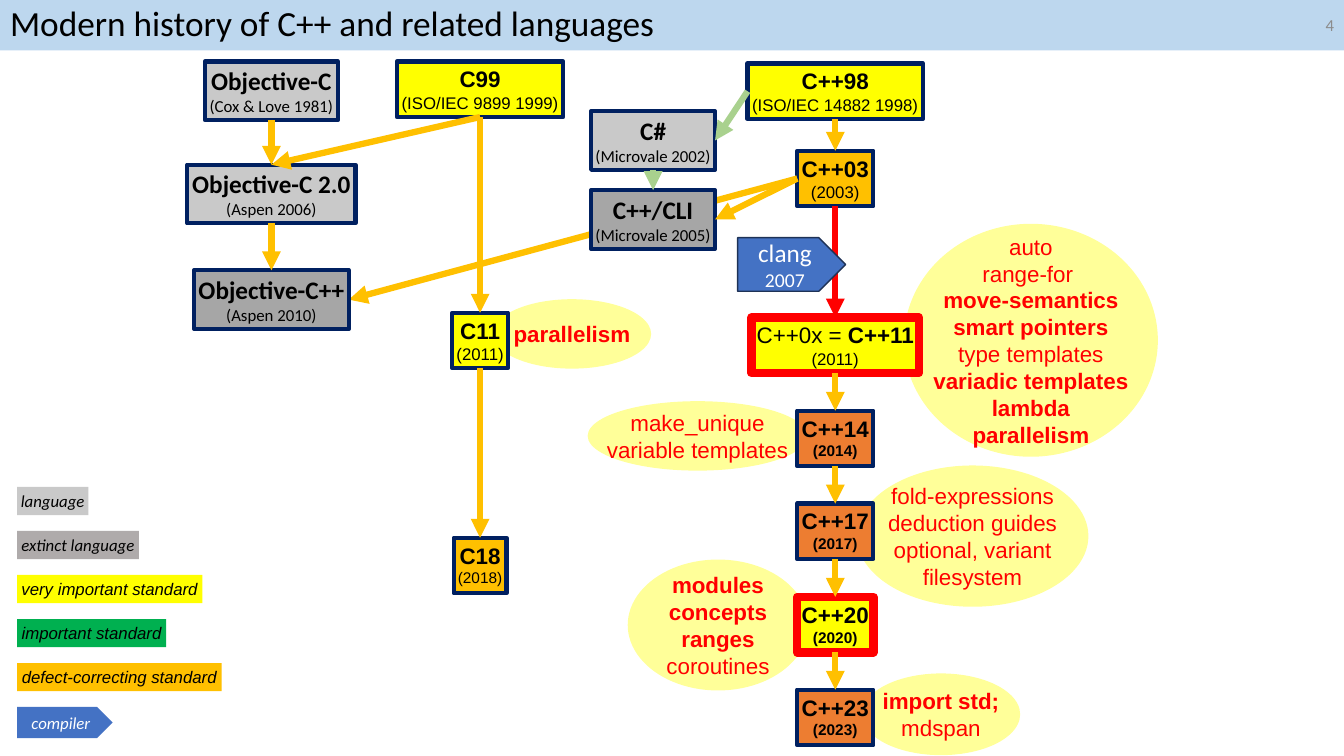
import pptx
import pptx.util
import pptx.dml.color
import pptx.enum.shapes
import pptx.enum.text
import pptx.oxml
import pptx.oxml.ns

Cm, Pt = pptx.util.Cm, pptx.util.Pt
KIND = pptx.enum.shapes.MSO_SHAPE
ALIGN = pptx.enum.text.PP_ALIGN
ANCHOR = pptx.enum.text.MSO_ANCHOR

# Content: text after a "*" is bold; lengths are in cm
TITLE = "Modern history of C++ and related languages"
PAGE = "4"
NAVY, RED, GOLD, GREEN = "002060", "FF0000", "FFC000", "A9D18E"
YELLOW, ORANGE, SILVER, GREY = "FFFF00", "ED7D31", "C9C9C9", "A6A6A6"
BLUE, SKY, CREAM, BLACK, WHITE = "4472C4", "BDD7EE", "FFFF99", "000000", "FFFFFF"

NOTES = [  # left, top, width, height, lines
    (15.82, 14.1, 4.55, 3.3, ["*modules", "*concepts", "*ranges", "coroutines"]),
    (21.59, 11.73, 5.84, 3.56,
     ["fold-expressions", "deduction guides", "optional, variant", "filesystem"]),
    (14.81, 10.11, 5.54, 1.75, ["make_unique", "variable templates"]),
    (21.72, 16.97, 3.99, 2.06, ["*import std;", "mdspan"]),
    (22.78, 5.64, 6.4, 5.87,
     ["auto", "range-for ", "*move-semantics", "*smart pointers", "type templates",
      "*variadic templates", "*lambda", "*parallelism"]),
    (12.42, 7.54, 3.99, 1.75, ["*parallelism"]),
]

STANDARD = ("Arial", 16, 1.4)  # font, head size, box height
LANGUAGE = ("Calibri", 18, 1.48)
COLUMNS = [  # centre, style, boxes: key, top, width, fill, edge, head, foot, foot size
    (21.05, STANDARD, [
        ("98", 1.6, 4.42, YELLOW, NAVY, "*C++98", "(ISO/IEC 14882 1998)", 12),
        ("03", 3.8, 1.92, GOLD, NAVY, "*C++03", "(2003)", 12),
        ("11", 8, 4.22, YELLOW, RED, "C++0x = *C++11", "(2011)", 12),
        ("14", 10.35, 1.92, ORANGE, NAVY, "*C++14", "*(2014)", 11),
        ("17", 12.69, 1.92, ORANGE, NAVY, "*C++17", "*(2017)", 11),
        ("20", 15.04, 1.92, YELLOW, RED, "*C++20", "*(2020)", 11),
        ("23", 17.38, 1.92, ORANGE, NAVY, "*C++23", "*(2023)", 11)]),
    (12.1, STANDARD, [
        ("C99", 1.55, 4.19, YELLOW, NAVY, "*C99", "(ISO/IEC 9899 1999)", 12),
        ("C11", 7.88, 1.4, YELLOW, NAVY, "*C11", "(2011)", 12),
        ("C18", 13.55, 1.33, GOLD, NAVY, "*C18", "(2018)", 11)]),
    (16.46, LANGUAGE, [
        ("C#", 2.8, 3.12, SILVER, NAVY, "*C#", "(Microvale 2002)", 12),
        ("CLI", 4.79, 3.12, GREY, NAVY, "*C++/CLI", "(Microvale 2005)", 12)]),
    (6.84, LANGUAGE, [
        ("ObjC", 1.55, 3.35, SILVER, NAVY, "*Objective-C", "(Cox & Love 1981)", 12),
        ("Obj2", 4.15, 4.24, SILVER, NAVY, "*Objective-C 2.0", "(Aspen 2006)", 12),
        ("Obj++", 6.81, 3.9, GREY, NAVY, "*Objective-C++", "(Aspen 2010)", 12)]),
]

TOP, LEFT, BOTTOM, RIGHT = range(4)
ARROWS = [  # from, side, to, side, colour
    ("03", LEFT, "Obj++", RIGHT, GOLD),
    ("98", BOTTOM, "03", TOP, GOLD),
    ("03", BOTTOM, "11", TOP, RED),
    ("11", BOTTOM, "14", TOP, GOLD),
    ("14", BOTTOM, "17", TOP, GOLD),
    ("17", BOTTOM, "20", TOP, GOLD),
    ("20", BOTTOM, "23", TOP, GOLD),
    ("ObjC", BOTTOM, "Obj2", TOP, GOLD),
    ("Obj2", BOTTOM, "Obj++", TOP, GOLD),
    ("C99", BOTTOM, "Obj2", TOP, GOLD),
    ("C99", BOTTOM, "C11", TOP, GOLD),
    ("C11", BOTTOM, "C18", TOP, GOLD),
    ("98", LEFT, "C#", RIGHT, GREEN),
    ("C#", BOTTOM, "CLI", TOP, GREEN),
    ("03", LEFT, "CLI", RIGHT, GOLD),
]

LEGEND = [  # label, width, fill, font
    ("language", 1.8, SILVER, "Calibri"),
    ("extinct language", 3.07, "AFABAB", "Calibri"),
    ("very important standard", 4.67, YELLOW, "Arial"),
    ("important standard", 3.76, "00B050", "Arial"),
    ("defect-correcting standard", 5.16, GOLD, "Arial"),
]

deck = pptx.Presentation()
deck.slide_width, deck.slide_height = Cm(33.87), Cm(19.05)
slide = deck.slides.add_slide(deck.slide_layouts[5])
shapes = slide.shapes


def paint(part, tint):
    part.solid()
    part.fore_color.rgb = pptx.dml.color.RGBColor.from_string(tint)


def write(shape, lines, font, tint, align=ALIGN.CENTER, inset=None, italic=False,
          anchor=ANCHOR.MIDDLE, wrap=False):
    """Fill a shape with (text, size) lines."""
    frame = shape.text_frame
    frame.auto_size = pptx.enum.text.MSO_AUTO_SIZE.NONE
    frame.word_wrap, frame.vertical_anchor = wrap, anchor
    if inset is not None:
        frame.margin_left = frame.margin_right = Cm(inset)
        frame.margin_top = frame.margin_bottom = Cm(inset)
    for i, (text, size) in enumerate(lines):
        para = frame.add_paragraph() if i else frame.paragraphs[0]
        para.alignment = align
        para.font.name, para.font.size = font, Pt(size)
        para.font.italic = italic
        paint(para.font.fill, tint)
        for j, part in enumerate(text.split("*")):
            if part:
                run = para.add_run()
                run.text, run.font.bold = part, j % 2 == 1


def draw(kind, x, y, w, h, fill, edge=None, width=0):
    shape = shapes.add_shape(kind, Cm(x), Cm(y), Cm(w), Cm(h))
    shape.shadow.inherit = False
    paint(shape.fill, fill)
    if edge:
        paint(shape.line.fill, edge)
        shape.line.width = Pt(width)
    else:
        shape.line.fill.background()
    return shape


def link(start, side, end, face, tint):
    line = shapes.add_connector(pptx.enum.shapes.MSO_CONNECTOR.STRAIGHT, 0, 0, 0, 0)
    line.begin_connect(boxes[start], side)
    line.end_connect(boxes[end], face)
    paint(line.line.fill, tint)
    line.line.width = Pt(4.5)
    for parent, tag in ((line.line._get_or_add_ln(), "a:tailEnd"),
                        (line._element.spPr, "a:effectLst")):
        node = pptx.oxml.parse_xml(f"<{tag} {pptx.oxml.ns.nsdecls('a')}/>")
        parent.append(node)
        if tag == "a:tailEnd":
            node.set("type", "triangle")
    return line


# Feature notes
for x, y, w, h, lines in NOTES:
    note = draw(KIND.OVAL, x, y, w, h, CREAM)
    write(note, [(text, 16) for text in lines], "Arial", RED, inset=0.1)

# Title bar and page number
title = shapes.title
title.left, title.top, title.width, title.height = 0, 0, Cm(32.18), Cm(1.27)
paint(title.fill, SKY)
write(title, [(TITLE, 25.2)], "Calibri", BLACK, ALIGN.LEFT, wrap=True)
title.text_frame.paragraphs[0].line_spacing = 0.9
page = draw(KIND.RECTANGLE, 32.18, 0, 1.69, 1.27, SKY)
write(page, [(PAGE, 12)], "Calibri", "8C8C8C", ALIGN.RIGHT, wrap=True)

# Version boxes
boxes = {}
for mid, (font, size, high), column in COLUMNS:
    for key, y, w, fill, edge, head, foot, small in column:
        box = draw(KIND.RECTANGLE, mid - w / 2, y, w, high, fill, edge,
                   6 if edge == RED else 3)
        write(box, [(head, size), (foot, small)], font, BLACK, inset=0.1,
              anchor=ANCHOR.TOP)
        boxes[key] = box

# Arrows; the first one runs behind the C# and C++/CLI boxes
lines = [link(*arrow) for arrow in ARROWS]
boxes["C#"]._element.addprevious(lines[0]._element)

# Compiler
clang = draw(KIND.PENTAGON, 18.59, 5.99, 2.72, 1.35, BLUE, "1E3256", 1)
write(clang, [("clang", 18), ("2007", 14)], "Calibri", WHITE)

# Legend
for i, (label, w, fill, font) in enumerate(LEGEND):
    tag = draw(KIND.RECTANGLE, 0.43, 12.27 + 1.11 * i, w, 0.71, fill)
    write(tag, [(label, 12)], font, BLACK, inset=0.1, italic=True)
tag = draw(KIND.PENTAGON, 0.43, 17.81, 2.41, 0.79, BLUE)
write(tag, [("compiler", 12)], "Calibri", WHITE, italic=True)

deck.save("out.pptx")
